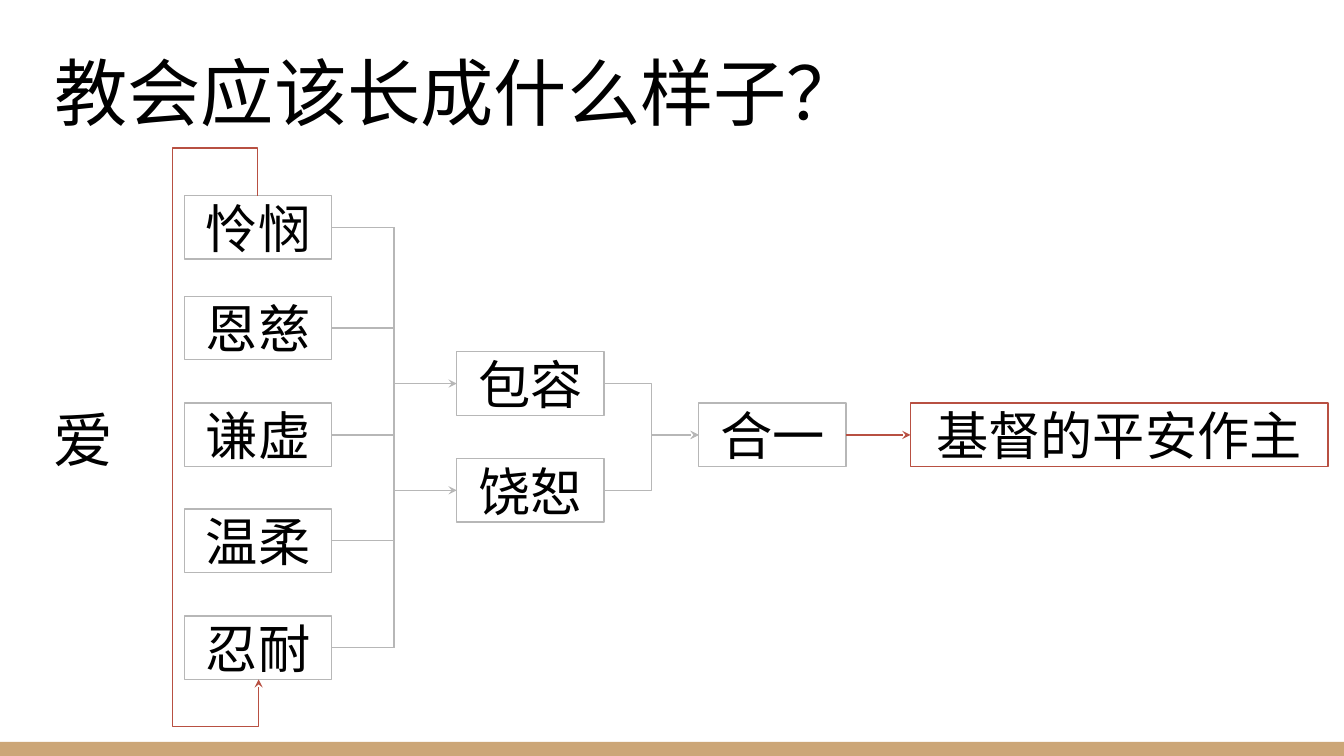
"""Build the slide that maps the virtues of a growing church with linked boxes."""
from lxml.etree import SubElement
from pptx import Presentation
from pptx.dml.color import RGBColor
from pptx.enum.shapes import MSO_CONNECTOR, MSO_SHAPE
from pptx.enum.text import MSO_ANCHOR as Anchor, PP_ALIGN as Align
from pptx.oxml.ns import qn
from pptx.util import Inches, Pt

TITLE = "教会应该长成什么样子？"
LOVE = "爱"
VIRTUES = [("怜悯", 1.94), ("恩慈", 2.94), ("谦虚", 4), ("温柔", 5.05), ("忍耐", 6.11)]
RESPONSES = [("包容", 3.49), ("饶恕", 4.55)]
UNITY = ("合一", 4)
PEACE = ("基督的平安作主", 4)

VIRTUE_LEFT, RESPONSE_LEFT, UNITY_LEFT, PEACE_LEFT = 1.83, 4.53, 6.93, 9.03
BOX_WIDTH, PEACE_WIDTH, BOX_HEIGHT = 1.46, 4.14, 0.63
LOOP_RISE, LOOP_REACH, LOOP_DEPTH = 0.47, 0.86, 0.01


class Theme:
    ink = RGBColor.from_string("000000")
    paper = RGBColor.from_string("FFFFFF")
    grey = RGBColor.from_string("B7B7B7")
    red = RGBColor.from_string("B85042")
    tan = RGBColor.from_string("CCA677")
    title_font, body_font = "Lato", "Open Sans"
    title_size, love_size, box_size = Pt(52.3), Pt(42.7), Pt(37.3)
    stroke = Pt(1.02)


def write(shape, wording, size, font, inset, anchor, align=Align.LEFT):
    frame = shape.text_frame
    frame.text = wording
    frame.word_wrap = True
    frame.vertical_anchor = anchor
    frame.margin_left = frame.margin_right = Inches(inset)
    frame.margin_top = frame.margin_bottom = Inches(inset)
    paragraph = frame.paragraphs[0]
    paragraph.alignment = align
    run = paragraph.runs[0]
    run.font.size, run.font.name = size, font
    run.font.color.rgb = Theme.ink
    SubElement(run.font._element, qn("a:ea")).set("typeface", font)
    return paragraph


def add_box(slide, entry, left, width=BOX_WIDTH, outline=Theme.grey):
    wording, top = entry
    box = slide.shapes.add_shape(
        MSO_SHAPE.RECTANGLE, Inches(left), Inches(top), Inches(width), Inches(BOX_HEIGHT))
    box.shadow.inherit = False
    box.fill.solid()
    box.fill.fore_color.rgb = Theme.paper
    box.line.color.rgb = outline
    box.line.width = Theme.stroke
    write(box, wording, Theme.box_size, Theme.body_font, 0.18, Anchor.MIDDLE, Align.CENTER)
    return box


def add_link(slide, source, target, color=Theme.grey, arrow=True, sites=(3, 1)):
    link = slide.shapes.add_connector(
        MSO_CONNECTOR.ELBOW, source.left + source.width, source.top + source.height // 2,
        target.left, target.top + target.height // 2)
    link.begin_connect(source, sites[0])
    link.end_connect(target, sites[1])
    link.line.color.rgb = color
    link.line.width = Theme.stroke
    if arrow:
        SubElement(link.line._get_or_add_ln(), qn("a:tailEnd")).set("type", "stealth")
    SubElement(link._element.spPr, qn("a:effectLst"))
    return link


def add_loop(slide, first, last):
    loop = add_link(slide, first, last, Theme.red, sites=(0, 2))
    span = last.top + last.height - first.top
    depth = Inches(LOOP_DEPTH)
    loop.left = first.left + first.width // 2 - span // 2
    loop.top = first.top + span // 2 - depth // 2
    loop.width, loop.height = span, depth
    frame = loop._element.spPr.find(qn("a:xfrm"))
    frame.attrib.pop("flipV", None)
    frame.set("rot", str(270 * 60000))
    frame.set("flipH", "1")
    geometry = loop._element.spPr.find(qn("a:prstGeom"))
    geometry.set("prst", "bentConnector5")
    rise = round(Inches(LOOP_RISE) / span * 100000)
    reach = round(LOOP_REACH / LOOP_DEPTH * 100000)
    for number, value in enumerate((-rise, -reach, 100000 + rise), 1):
        guide = SubElement(geometry.find(qn("a:avLst")), qn("a:gd"))
        guide.set("name", f"adj{number}")
        guide.set("fmla", f"val {value}")


def main():
    deck = Presentation()
    deck.slide_width, deck.slide_height = Inches(13.33), Inches(7.5)
    slide = deck.slides.add_slide(deck.slide_layouts[6])

    band = slide.shapes.add_shape(
        MSO_SHAPE.RECTANGLE, 0, Inches(7.36), deck.slide_width, Inches(0.14))
    band.shadow.inherit = False
    band.fill.solid()
    band.fill.fore_color.rgb = Theme.tan
    band.line.fill.background()

    title = slide.shapes.add_textbox(Inches(0.41), Inches(0.63), Inches(12.42), Inches(0.84))
    heading = write(title, TITLE, Theme.title_size, Theme.title_font, 0.13, Anchor.BOTTOM)
    heading.line_spacing = 1.5
    love = slide.shapes.add_textbox(Inches(0.35), Inches(3.82), Inches(0.95), Inches(0.99))
    write(love, LOVE, Theme.love_size, Theme.body_font, 0.18, Anchor.TOP)

    virtues = [add_box(slide, entry, VIRTUE_LEFT) for entry in VIRTUES]
    responses = [add_box(slide, entry, RESPONSE_LEFT) for entry in RESPONSES]
    unity = add_box(slide, UNITY, UNITY_LEFT)
    peace = add_box(slide, PEACE, PEACE_LEFT, PEACE_WIDTH, Theme.red)

    add_loop(slide, virtues[0], virtues[-1])
    for response, lead in zip(responses, (virtues[0], virtues[-1])):
        for virtue in virtues:
            add_link(slide, virtue, response, arrow=virtue is lead)
        add_link(slide, response, unity)
    add_link(slide, unity, peace, Theme.red)

    deck.save("out.pptx")


if __name__ == "__main__":
    main()
